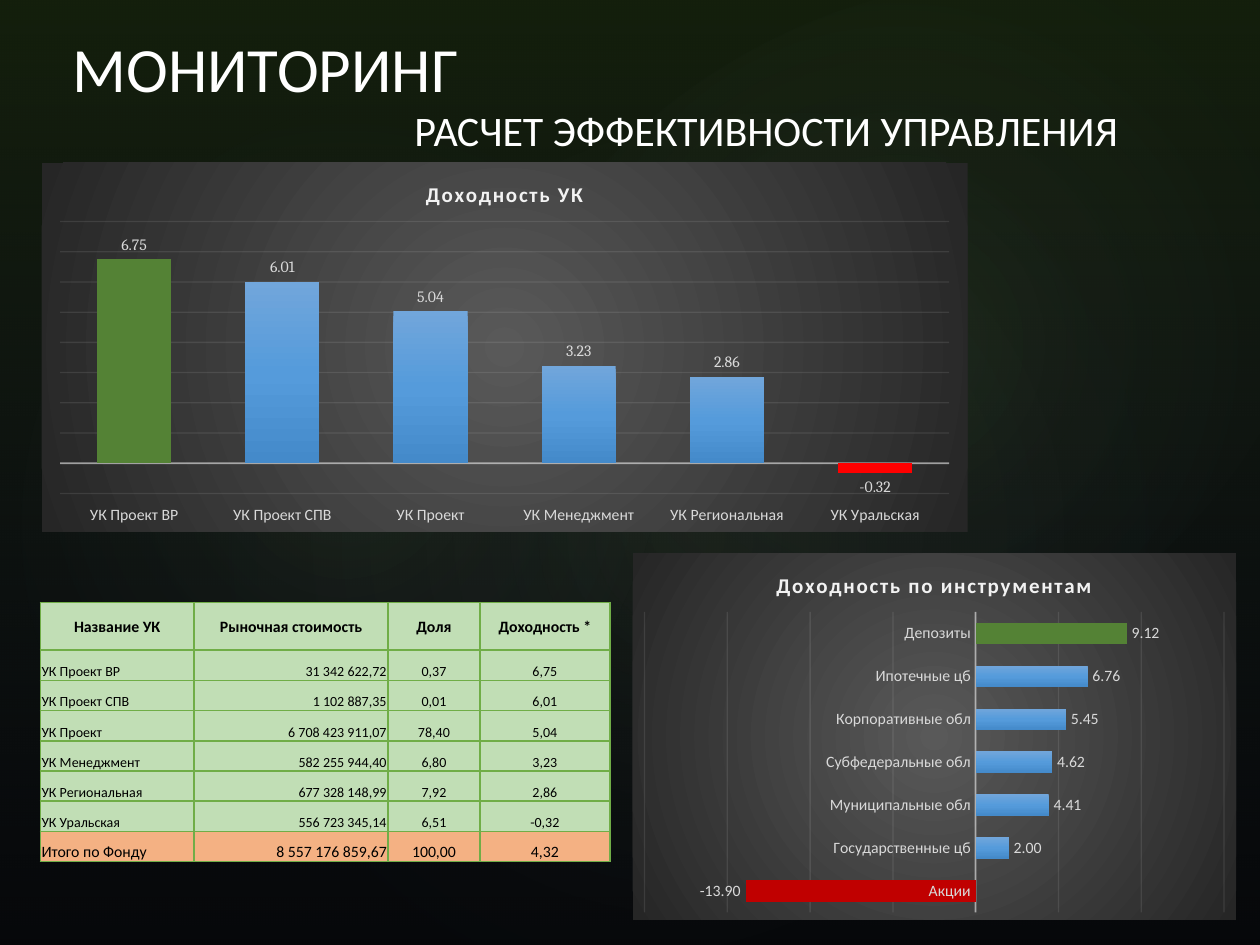
from dataclasses import dataclass

from lxml import etree
from pptx import Presentation
from pptx.chart.data import CategoryChartData
from pptx.dml.color import RGBColor
from pptx.enum import chart as ch, shapes, text
from pptx.oxml import parse_xml
from pptx.oxml.ns import nsdecls, qn
from pptx.util import Inches, Pt

ALIGN = text.PP_ALIGN
ANCHOR = text.MSO_ANCHOR


@dataclass
class Glow:
    box: tuple
    rotation: float
    opacity: int


@dataclass
class ReturnsChart:
    kind: int
    box: tuple
    title: str
    returns: dict
    limits: tuple
    step: int
    number_format: str
    label_font: str
    highlights: dict
    overlap: int = 0
    label_position: int = ch.XL_TICK_LABEL_POSITION.NEXT_TO_AXIS


GLOWS = [
    Glow((1.5, 1.14, 7.92, 6.24), 328.7, 7),
    Glow((-0.3, 1.28, 6.06, 4.9), 294.3, 8),
    Glow((3.58, 0.13, 7.09, 5.2), 328.7, 8),
]
CHARTS = [
    ReturnsChart(
        ch.XL_CHART_TYPE.BAR_CLUSTERED, (5.02, 4.39, 4.79, 2.91), "Доходность по инструментам",
        {"Акции": -13.9, "Государственные цб": 2, "Муниципальные обл": 4.41,
         "Субфедеральные обл": 4.62, "Корпоративные обл": 5.45,
         "Ипотечные цб": 6.76, "Депозиты": 9.12},
        (-20, 15), 5, "#,##0.00", "Calibri", {0: "C00000", 6: "548235"}),
    ReturnsChart(
        ch.XL_CHART_TYPE.COLUMN_CLUSTERED, (0.33, 1.29, 7.35, 2.93), "Доходность УК",
        {"УК Проект ВР": 6.75, "УК Проект СПВ": 6.01, "УК Проект": 5.04,
         "УК Менеджмент": 3.23, "УК Региональная": 2.86, "УК Уральская": -0.32},
        (-1, 8), 1, "0.00", "Cambria", {0: "548235", 5: "FF0000"},
        -24, ch.XL_TICK_LABEL_POSITION.LOW),
]
FUND_ROWS = [
    ("Название УК", "Рыночная стоимость", "Доля", "Доходность *"),
    ("УК Проект ВР", "31 342 622,72", "0,37", "6,75"),
    ("УК Проект СПВ", "1 102 887,35", "0,01", "6,01"),
    ("УК Проект", "6 708 423 911,07", "78,40", "5,04"),
    ("УК Менеджмент", "582 255 944,40", "6,80", "3,23"),
    ("УК Региональная", "677 328 148,99", "7,92", "2,86"),
    ("УК Уральская", "556 723 345,14", "6,51", "-0,32"),
    ("Итого по Фонду", "8 557 176 859,67", "100,00", "4,32"),
]
COLUMN_WIDTHS = (1.22, 1.54, 0.73, 1.03)
COLUMN_ALIGN = (ALIGN.LEFT, ALIGN.RIGHT, ALIGN.CENTER, ALIGN.CENTER)


def color(value: str) -> RGBColor:
    return RGBColor.from_string(value)


def inches(box: tuple) -> list:
    return [Inches(length) for length in box]


def set_font(font, size: float, hue: str, name: str = "Calibri", bold: bool = False) -> None:
    font.color.rgb = color(hue)
    for key, value in {"size": Pt(size), "name": name, "bold": bold}.items():
        setattr(font, key, value)


def gradient(stops: list, radial: bool = False):
    """Return a gradFill from (position, colour, opacity) stops, in percent."""
    marks = "".join(
        f'<a:gs pos="{place * 1000}"><a:srgbClr val="{hue}">'
        f'<a:alpha val="{opacity * 1000}"/></a:srgbClr></a:gs>'
        for place, hue, opacity in stops)
    course = ('<a:path path="circle"><a:fillToRect l="50000" t="50000" r="50000" b="50000"/></a:path>'
              if radial else '<a:lin ang="5400000" scaled="0"/>')
    return parse_xml(f'<a:gradFill {nsdecls("a")} rotWithShape="1">'
                     f'<a:gsLst>{marks}</a:gsLst>{course}</a:gradFill>')


def replace_solid(properties, fill) -> None:
    properties.replace(properties.find(qn("a:solidFill")), fill)


def add_backdrop(slide, preset: int, box: tuple, fill, rotation: float = 0) -> None:
    shape = slide.shapes.add_shape(preset, *inches(box))
    shape.shadow.inherit = False
    shape.rotation = rotation
    shape.line.fill.background()
    shape.fill.solid()
    replace_solid(shape.element.spPr, fill)


def add_heading(slide, box: tuple, words: str, size: float, anchor: int) -> None:
    frame = slide.shapes.add_textbox(*inches(box)).text_frame
    frame.word_wrap = True
    frame.vertical_anchor = anchor
    run = frame.paragraphs[0].add_run()
    run.text = words
    set_font(run.font, size, "FFFFFF")


def style_line(line, width: float, hue: str) -> None:
    line.width = Pt(width)
    line.color.rgb = color(hue)


def set_opacity(root, query: str, percent: int) -> None:
    for hue in root.xpath(query):
        etree.SubElement(hue, qn("a:alpha")).set("val", str(percent * 1000))


def add_returns_chart(slide, item: ReturnsChart) -> None:
    data = CategoryChartData(number_format=item.number_format)
    data.categories = list(item.returns)
    data.add_series("Series 1", list(item.returns.values()))
    chart = slide.shapes.add_chart(item.kind, *inches(item.box), data).chart
    set_font(chart.font, 10, "FFFFFF", "Cambria")
    chart.has_legend = False
    chart.has_title = True
    title = chart.chart_title.text_frame.paragraphs[0].add_run()
    title.text = item.title
    set_font(title.font, 12, "F2F2F2", bold=True)
    title.font._element.set("spc", "100")

    categories, values = chart.category_axis, chart.value_axis
    categories.major_tick_mark = ch.XL_TICK_MARK.NONE
    categories.tick_label_position = item.label_position
    set_font(categories.tick_labels.font, 9, "D9D9D9")
    style_line(categories.format.line, 1, "F2F2F2")
    axis_format = {"visible": False, "has_major_gridlines": True, "major_unit": item.step,
                   "minimum_scale": item.limits[0], "maximum_scale": item.limits[1]}
    for key, value in axis_format.items():
        setattr(values, key, value)
    style_line(values.major_gridlines.format.line, 0.75, "F2F2F2")

    plot = chart.plots[0]
    for key, value in {"gap_width": 100, "overlap": item.overlap,
                       "vary_by_categories": False, "has_data_labels": True}.items():
        setattr(plot, key, value)
    labels = plot.data_labels
    for key, value in {"show_value": True, "number_format": item.number_format,
                       "number_format_is_linked": False,
                       "position": ch.XL_LABEL_POSITION.OUTSIDE_END}.items():
        setattr(labels, key, value)
    set_font(labels.font, 9, "D9D9D9", item.label_font)

    series = plot.series[0]
    series.invert_if_negative = False
    series.format.fill.solid()
    for index, hue in item.highlights.items():
        fill = series.points[index].format.fill
        fill.solid()
        fill.fore_color.rgb = color(hue)

    root = chart.element
    replace_solid(root.xpath(".//c:ser/c:spPr")[0],
                  gradient([(0, "71A6DB", 100), (50, "559BDB", 100), (100, "448ACA", 100)]))
    set_opacity(root, ".//c:catAx/c:spPr//a:srgbClr", 54)
    set_opacity(root, ".//c:majorGridlines//a:srgbClr", 10)
    area = parse_xml(f'<c:spPr {nsdecls("c", "a")}><a:ln><a:noFill/></a:ln></c:spPr>')
    area.insert(0, gradient([(0, "595959", 100), (100, "262626", 100)], radial=True))
    root.find(qn("c:chart")).addnext(area)


def add_borders(cell) -> None:
    properties = cell._tc.get_or_add_tcPr()
    for place, side in enumerate(("lnL", "lnR", "lnT", "lnB")):
        properties.insert(place, parse_xml(
            f'<a:{side} {nsdecls("a")} w="12700"><a:solidFill><a:srgbClr val="70AD47"/>'
            f'</a:solidFill></a:{side}>'))


def add_fund_table(slide) -> None:
    last = len(FUND_ROWS) - 1
    table = slide.shapes.add_table(last + 1, len(COLUMN_WIDTHS),
                                   *inches((0.32, 4.78, 4.52, 2.06))).table
    for column, width in zip(table.columns, COLUMN_WIDTHS):
        column.width = Inches(width)
    for r, entries in enumerate(FUND_ROWS):
        header, total = r == 0, r == last
        table.rows[r].height = Inches(0.38 if header else 0.24)
        for c, entry in enumerate(entries):
            cell = table.cell(r, c)
            cell_format = {"margin_left": Inches(0.01), "margin_right": Inches(0.01),
                           "margin_top": Inches(0.01), "margin_bottom": 0,
                           "vertical_anchor": ANCHOR.MIDDLE if header else ANCHOR.BOTTOM}
            for key, value in cell_format.items():
                setattr(cell, key, value)
            cell.fill.solid()
            cell.fill.fore_color.rgb = color("F4B183" if total else "C1DEB5")
            add_borders(cell)
            paragraph = cell.text_frame.paragraphs[0]
            paragraph.alignment = ALIGN.CENTER if header else COLUMN_ALIGN[c]
            run = paragraph.add_run()
            run.text = entry
            set_font(run.font, 9 if header or total else 8, "000000", bold=header)


def main() -> None:
    deck = Presentation()
    deck.slide_width, deck.slide_height = Inches(10), Inches(7.5)
    slide = deck.slides.add_slide(deck.slide_layouts[6])
    slide.background.fill.solid()
    slide.background.fill.fore_color.rgb = color("000000")
    add_backdrop(slide, shapes.MSO_SHAPE.RECTANGLE, (0, 0, 10, 7.5),
                 gradient([(0, "385723", 36), (100, "44546A", 10)]))
    for glow in GLOWS:
        add_backdrop(slide, shapes.MSO_SHAPE.OVAL, glow.box,
                     gradient([(0, "A9D18E", glow.opacity), (58, "44546A", 0)], radial=True),
                     glow.rotation)
    add_heading(slide, (0.48, 0.17, 3.37, 0.71), "МОНИТОРИНГ", 36, ANCHOR.BOTTOM)
    add_heading(slide, (3.19, 0.78, 6.16, 0.5), "РАСЧЕТ ЭФФЕКТИВНОСТИ УПРАВЛЕНИЯ", 24, ANCHOR.TOP)
    for item in CHARTS:
        add_returns_chart(slide, item)
    add_fund_table(slide)
    deck.save("out.pptx")


if __name__ == "__main__":
    main()
